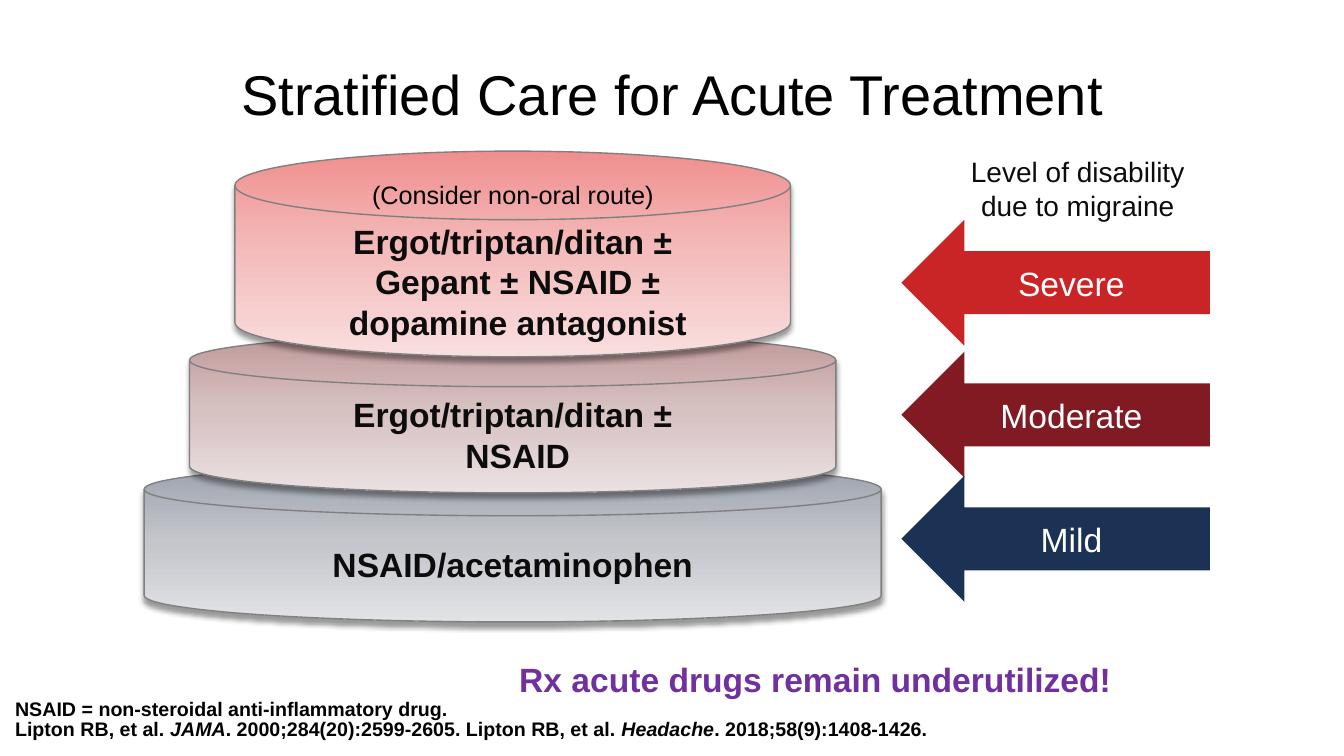
from copy import deepcopy

from pptx import Presentation
from pptx import util as u
from pptx.dml import color
from pptx.enum import shapes, text
from pptx.oxml import ns, parse_xml

PX = 9144
INK, BLACK, WHITE = "0D0C0C", "000000", "FFFFFF"
MIDDLE, TOP, BOTTOM = (text.MSO_ANCHOR.MIDDLE, text.MSO_ANCHOR.TOP,
                       text.MSO_ANCHOR.BOTTOM)
CENTER, LEFT = text.PP_ALIGN.CENTER, text.PP_ALIGN.LEFT
HANGING = {"marL": 10 * PX, "indent": -10 * PX}


def rgb(value):
    """Turn a hex string into a colour."""
    return color.RGBColor.from_string(value)


def scale(box):
    """Turn a box in px into EMU."""
    return [length * PX for length in box]


def set_all(target, values):
    """Set attributes from a dict of format values."""
    for name, value in values.items():
        setattr(target, name, value)


def write(shape, lines, size, ink, bold=False, anchor=MIDDLE, align=CENTER,
          inset=(10, 5), wrap=True, spacing=None, indent=None,
          fit=text.MSO_AUTO_SIZE.NONE):
    """Fill a shape with paragraphs made of (text, italic) spans."""
    frame = shape.text_frame
    across, down = scale(inset)
    set_all(frame, {"margin_left": across, "margin_right": across,
                    "margin_top": down, "margin_bottom": down,
                    "vertical_anchor": anchor, "word_wrap": wrap,
                    "auto_size": fit})
    for number, spans in enumerate(lines):
        para = frame.add_paragraph() if number else frame.paragraphs[0]
        set_all(para, {"alignment": align, "line_spacing": spacing})
        for name, value in (indent or {}).items():
            para._p.get_or_add_pPr().set(name, str(value))
        for words, italic in spans:
            span = para.add_run()
            span.text = words
            set_all(span.font, {"name": "Arial", "size": u.Pt(size),
                                "bold": bold, "italic": italic})
            span.font.color.rgb = rgb(ink)


def add_text(page, box, lines, size, ink, **values):
    """Add a text box; a plain string is a one-span paragraph."""
    lines = [[(line, False)] if isinstance(line, str) else line for line in lines]
    write(page.shapes.add_textbox(*scale(box)), lines, size, ink, **values)


def add_gradient(shape, colours):
    """Fill a shape from top to bottom with evenly spaced colours."""
    shape.fill.gradient()
    shape.fill.gradient_angle = 270
    stop_list = shape._element.spPr.find(".//" + ns.qn("a:gsLst"))
    stop_list.insert(1, deepcopy(stop_list[0]))
    for number, (stop, value) in enumerate(zip(shape.fill.gradient_stops, colours)):
        stop.position = number / (len(colours) - 1)
        stop.color.rgb = rgb(value)


def add_shadow(shape):
    """Give a shape a soft shadow below it."""
    shape.shadow.inherit = False
    shape._element.spPr.find(ns.qn("a:effectLst")).append(parse_xml(
        f'<a:outerShdw {ns.nsdecls("a")} blurRad="{u.Pt(4)}" dist="{u.Pt(3)}" '
        'dir="5400000" algn="t" rotWithShape="0"><a:srgbClr val="000000">'
        '<a:alpha val="40000"/></a:srgbClr></a:outerShdw>'))


def add_tier(page, box, colours, label, drop):
    """Draw one disk of the stack, its label set drop px below its top."""
    left, top, width, height = box
    disk = page.shapes.add_shape(
        shapes.MSO_SHAPE.FLOWCHART_MAGNETIC_DISK, *scale(box))
    add_gradient(disk, colours)
    disk.line.color.rgb = rgb("808080")
    disk.line.width = u.Pt(1)
    add_shadow(disk)
    label_width = 385
    label_box = (left + (width - label_width) // 2, top + drop, label_width, 92)
    add_text(page, label_box, [label], 24, INK, bold=True, inset=(0, 0),
             indent=HANGING)


def add_stack(page, box):
    """Stack the treatment tiers, mildest first, from the bottom of a box."""
    left, top, width, height = box
    tiers = [
        (0, 309, 158, ("9DA1AD", "C4C6CC", "E2E3E6"), "NSAID/acetaminophen", 55),
        (45, 181, 158, ("C0999A", "D7C2C2", "EBE1E2"),
         "Ergot/triptan/ditan ± NSAID", 54),
        (90, 0, 204, ("F08F8F", "F4BCBC", "F9DEDE"),
         "Ergot/triptan/ditan ± Gepant ± NSAID ± dopamine antagonist", 83)]
    for inset, down, tall, colours, label, drop in tiers:
        tier_box = (left + inset, top + down, width - 2 * inset, tall)
        add_tier(page, tier_box, colours, label, drop)
    add_text(page, (left + 221, top + 23, 292, 40), ["(Consider non-oral route)"],
             18, BLACK, anchor=TOP, align=LEFT, inset=(5, 5), wrap=False,
             fit=text.MSO_AUTO_SIZE.SHAPE_TO_FIT_TEXT)


def add_levels(page, box):
    """Place the disability heading and its arrows in a box."""
    left, top, width, height = box
    levels = [("Mild", 335, "1B3255"), ("Moderate", 212, "811A22"),
              ("Severe", 81, "CA2526")]
    for name, down, fill in levels:
        arrow = page.shapes.add_shape(
            shapes.MSO_SHAPE.LEFT_ARROW, *scale((left, top + down, width, 125)))
        arrow.shadow.inherit = False
        arrow.fill.solid()
        arrow.fill.fore_color.rgb = rgb(fill)
        arrow.line.fill.background()
        write(arrow, [[(name, False)]], 24, WHITE, wrap=False)
    add_text(page, (left + 22, top, width, 99),
             ["Level of disability", "due to migraine"], 20, INK, indent=HANGING)


def add_footer(page, box):
    """Place the closing message and the references in a box."""
    left, top, width, height = box
    add_text(page, (left + 510, top, 603, 50),
             ["Rx acute drugs remain underutilized!"], 24, "7030A0", bold=True,
             anchor=TOP, align=LEFT, inset=(5, 5), wrap=False,
             fit=text.MSO_AUTO_SIZE.SHAPE_TO_FIT_TEXT)
    references = [("Lipton RB, et al. ", False), ("JAMA", True),
                  (". 2000;284(20):2599-2605. Lipton RB, et al. ", False),
                  ("Headache", True), (". 2018;58(9):1408-1426.", False)]
    add_text(page, (left, top + 43, width, height - 43),
             ["NSAID = non-steroidal anti-inflammatory drug.", references],
             14, BLACK, bold=True, anchor=BOTTOM, align=LEFT, inset=(15, 15),
             spacing=0.85)


def main():
    """Build the deck and save it."""
    deck = Presentation()
    set_all(deck, {"slide_width": 1333 * PX, "slide_height": 750 * PX})
    page = deck.slides.add_slide(deck.slide_layouts[6])
    add_text(page, (0, 38, 1333, 117), ["Stratified Care for Acute Treatment"],
             40, BLACK, inset=(5, 5), spacing=0.9)
    add_stack(page, (143, 150, 731, 467))
    add_levels(page, (894, 137, 306, 460))
    add_footer(page, (0, 649, 1333, 101))
    deck.save("out.pptx")


if __name__ == "__main__":
    main()
